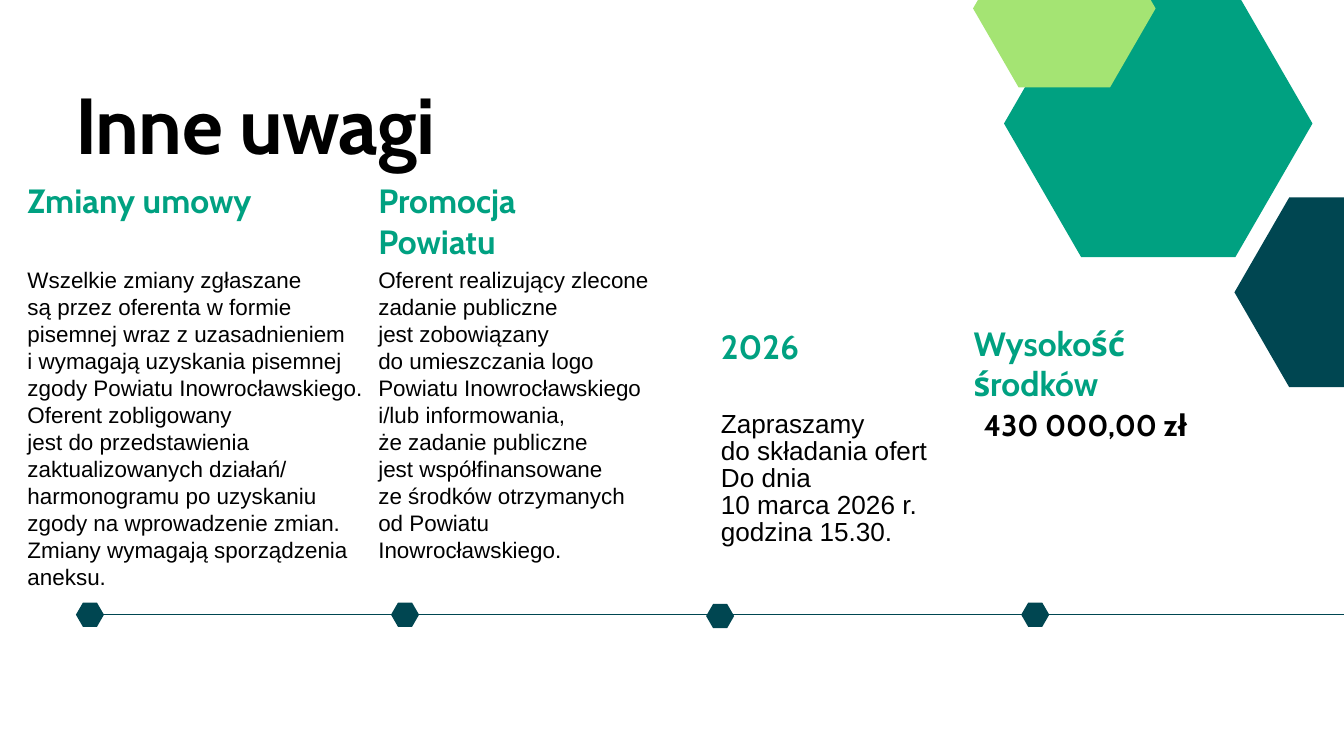
from math import sqrt

from lxml.etree import SubElement
from pptx import Presentation
from pptx.dml.color import RGBColor
from pptx.enum.shapes import MSO_CONNECTOR
from pptx.enum.text import MSO_AUTO_SIZE
from pptx.oxml.ns import qn
from pptx.util import Cm, Pt

BLACK, GREEN, NAVY, LIME = "000000", "00A181", "004651", "A4E473"
WIDTH, HEIGHT = 50.8, 28.58

# Text styles: font, size, line spacing, colour, bold, letter spacing
STYLES = {
    "title": ("Cabin", 85, 102, BLACK, True, -0.8),
    "heading": ("Cabin", 36, 43.2, GREEN, True, 0),
    "amount": ("Cabin", 32, 28.9, BLACK, True, 0),
    "body": ("Arial", 24, 28.9, BLACK, False, 0),
    "deadline": ("Arial", 28, 28.9, BLACK, False, 0),
}

# Texts: style, (left, top, width, height) in cm, paragraphs
TEXTS = [
    ("heading", (1.04, 6.81, 11.71, 1.52), ["Zmiany umowy"]),
    ("body", (1.04, 10.06, 12.73, 15.39), [
        "Wszelkie zmiany zgłaszane \nsą przez oferenta w formie pisemnej "
        "wraz z uzasadnieniem \ni wymagają uzyskania pisemnej zgody "
        "Powiatu Inowrocławskiego.",
        "Oferent zobligowany \njest do przedstawienia zaktualizowanych "
        "działań/ harmonogramu po uzyskaniu zgody na wprowadzenie zmian. "
        "Zmiany wymagają sporządzenia aneksu.",
    ]),
    ("heading", (14.3, 6.81, 9.35, 3.07), ["Promocja Powiatu"]),
    ("body", (14.3, 10.06, 10.49, 11.28), [
        "Oferent realizujący zlecone zadanie publiczne \njest zobowiązany \n"
        "do umieszczania logo Powiatu Inowrocławskiego \n"
        "i/lub informowania, \nże zadanie publiczne \n"
        "jest współfinansowane \nze środków otrzymanych \n"
        "od Powiatu Inowrocławskiego.",
    ]),
    ("heading", (36.8, 12.19, 9.35, 3.07), ["Wysokość środków"]),
    ("amount", (37.19, 15.72, 9.35, 1.07), ["430 000,00 zł"]),
    ("heading", (27.25, 12.32, 9.35, 1.52), ["2026"]),
    ("deadline", (27.25, 15.57, 9.35, 5.16), [
        "Zapraszamy \ndo składania ofert",
        "Do dnia",
        "10 marca 2026 r.",
        "godzina 15.30.",
    ]),
    ("title", (2.84, 2.84, 15.82, 3.58), ["Inne uwagi"]),
]

# Timeline in cm; the third marker sits slightly lower
TIMELINE_Y, FIRST_MARKER, MARKER_STEP, MARKER_WIDTH = 23.24, 3.4, 11.91, 1.06
MARKER_DROPS = [0, 0, 0.05, 0]

# Corner hexagons: centre x, centre y, width, colour
CORNER = [
    (50.8, 11.05, 8.28, NAVY),
    (43.78, 4.67, 11.66, GREEN),
    (40.23, 0.32, 6.9, LIME),
]


def rgb(value):
    return RGBColor.from_string(value)


def add_text(slide, style, box, paragraphs):
    font_name, size, spacing, color, bold, tracking = STYLES[style]
    frame = slide.shapes.add_textbox(*map(Cm, box)).text_frame
    frame.word_wrap = True
    frame.auto_size = MSO_AUTO_SIZE.SHAPE_TO_FIT_TEXT
    frame.margin_left = frame.margin_right = 0
    frame.margin_top = frame.margin_bottom = 0
    for index, content in enumerate(paragraphs):
        paragraph = frame.add_paragraph() if index else frame.paragraphs[0]
        paragraph.line_spacing = Pt(spacing)
        paragraph.font.size = Pt(size)
        for line_index, line in enumerate(content.split("\n")):
            if line_index:
                paragraph.add_line_break()
            run = paragraph.add_run()
            run.text = line
            run.font.name = font_name
            run.font.size = Pt(size)
            run.font.bold = bold
            run.font.color.rgb = rgb(color)
            if tracking:
                run._r.get_or_add_rPr().set("spc", str(round(tracking * 100)))


def add_hexagon(slide, x, y, width, color):
    half, quarter, rise = width / 2, width / 4, width * sqrt(3) / 4
    corners = [(half, 0), (quarter, rise), (-quarter, rise),
               (-half, 0), (-quarter, -rise), (quarter, -rise)]
    points = [(Cm(x + dx), Cm(y + dy)) for dx, dy in corners]
    builder = slide.shapes.build_freeform(*points[0])
    builder.add_line_segments(points[1:], close=True)
    hexagon = builder.convert_to_shape()
    hexagon.fill.solid()
    hexagon.fill.fore_color.rgb = rgb(color)
    hexagon.line.fill.background()
    hexagon.shadow.inherit = False


def main():
    deck = Presentation()
    deck.slide_width, deck.slide_height = Cm(WIDTH), Cm(HEIGHT)
    slide = deck.slides.add_slide(deck.slide_layouts[6])

    # Timeline axis
    axis = slide.shapes.add_connector(
        MSO_CONNECTOR.STRAIGHT,
        Cm(FIRST_MARKER), Cm(TIMELINE_Y), Cm(WIDTH), Cm(TIMELINE_Y))
    axis.line.color.rgb = rgb(NAVY)
    axis.line.width = Pt(1.5)
    SubElement(axis._element.spPr, qn("a:effectLst"))

    # Title and columns
    for style, box, paragraphs in TEXTS:
        add_text(slide, style, box, paragraphs)

    # Timeline markers
    for index, drop in enumerate(MARKER_DROPS):
        add_hexagon(slide, FIRST_MARKER + index * MARKER_STEP,
                    TIMELINE_Y + drop, MARKER_WIDTH, NAVY)

    # Corner decoration
    for hexagon in CORNER:
        add_hexagon(slide, *hexagon)

    deck.save("out.pptx")


if __name__ == "__main__":
    main()
